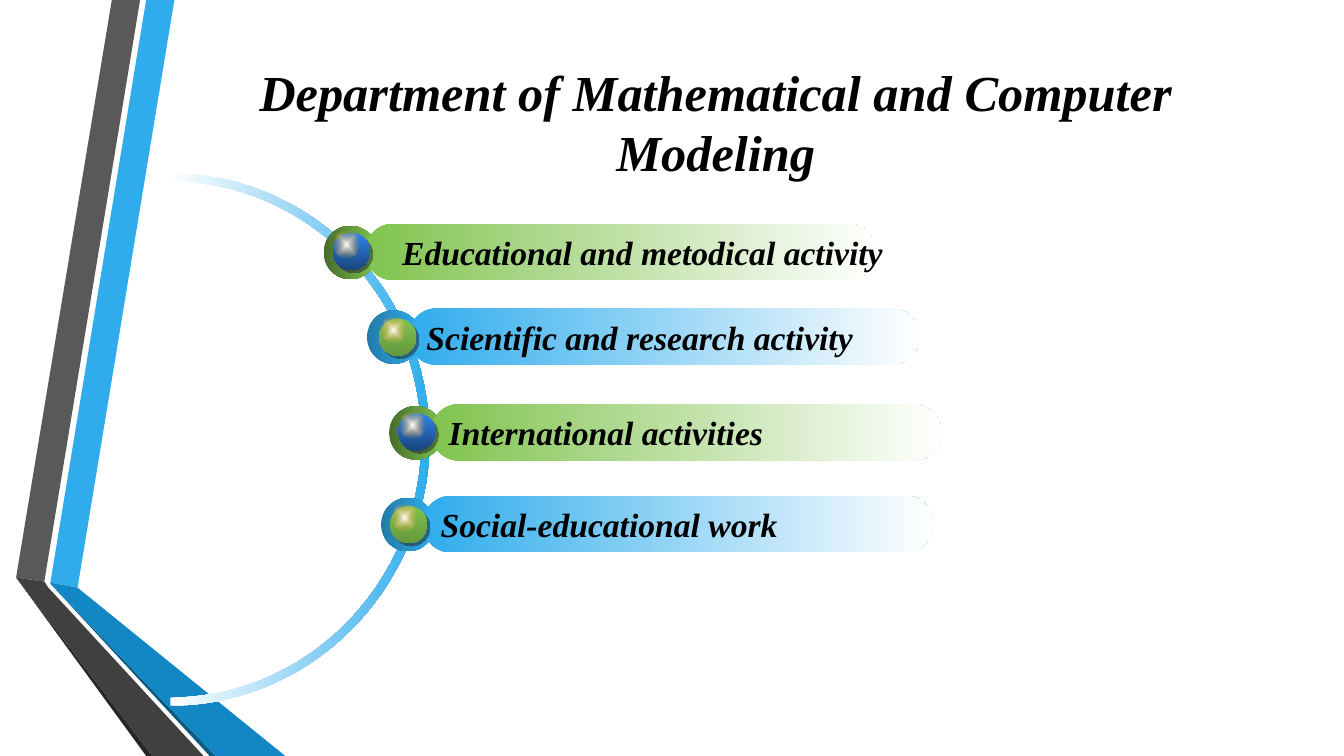
from dataclasses import dataclass

from lxml.etree import SubElement
from pptx import Presentation
from pptx.dml.color import RGBColor
from pptx.enum.shapes import MSO_SHAPE
from pptx.enum.text import MSO_ANCHOR, PP_ALIGN
from pptx.oxml import parse_xml
from pptx.oxml.ns import nsdecls, qn
from pptx.util import Inches, Pt


@dataclass(frozen=True)
class Theme:
    font: str = "Times New Roman"
    title_size: int = 36
    label_size: int = 24
    text: str = "000000"
    white: str = "FFFFFF"
    blue: str = "30ACEC"
    green: str = "80C34F"
    blue_ring: tuple = ("227BA9", "30ACEC")
    green_ring: tuple = ("476C2C", "80C34F")
    blue_ball: tuple = ("3085ED", "19457C")
    green_ball: tuple = ("80C34F", "64993E")
    glow: str = "E9940B"
    shadow: str = "212121"
    gray: str = "595959"
    dark_gray: str = "404040"
    black_gray: str = "262626"
    deep_blue: str = "1287C3"
    navy: str = "0C5A82"


THEME = Theme()

RIBBONS = [
    (THEME.blue, [(0.5, 5.78), (0.77, 5.83), (1.73, 0), (1.45, 0)]),
    (THEME.gray, [(1.39, 0), (1.11, 0), (0.16, 5.73), (0.44, 5.77)]),
    (THEME.black_gray, [(0.16, 5.73), (1.45, 7.5), (1.51, 7.5)]),
    (THEME.navy, [(0.5, 5.79), (2.08, 7.5), (2.14, 7.5)]),
    (THEME.deep_blue, [(0.5, 5.79), (2.14, 7.5), (2.83, 7.5), (0.77, 5.83), (0.5, 5.78)]),
    (THEME.dark_gray, [(2.02, 7.5), (0.48, 5.83), (0.44, 5.77), (0.16, 5.73), (1.51, 7.5)]),
]

ARC_CORNERS = [(1.69, 1.8), (4.18, 4.36), (1.69, 6.92), (1.69, 7), (4.26, 4.36), (1.69, 1.72)]

GREEN_ITEM = (THEME.green_ring, THEME.green, THEME.blue_ball)
BLUE_ITEM = (THEME.blue_ring, THEME.blue, THEME.green_ball)

ITEMS = [
    (3.86, 4.03, 0.09, 0.07, GREEN_ITEM, "International activities"),
    (3.78, 4.94, 0.09, 0.08, BLUE_ITEM, "Social-educational work"),
    (3.64, 3.08, 0.12, 0.08, BLUE_ITEM, "Scientific and research activity"),
    (3.21, 2.24, 0.09, 0.07, GREEN_ITEM, ""),
]


def clear_style(shape):
    shape.line.fill.background()
    shape.shadow.inherit = False


def fill_gradient(shape, colors, angle=0):
    shape.fill.gradient()
    shape.fill.gradient_angle = angle
    for stop, color in zip(shape.fill.gradient_stops, colors):
        stop.color.rgb = RGBColor.from_string(color)


def add_polygon(shapes, points):
    corners = [(Inches(x), Inches(y)) for x, y in points]
    builder = shapes.build_freeform(*corners[0])
    builder.add_line_segments(corners[1:], close=True)
    shape = builder.convert_to_shape()
    clear_style(shape)
    return shape


def add_ribbon(shapes, color, points):
    shape = add_polygon(shapes, points)
    shape.fill.solid()
    shape.fill.fore_color.rgb = RGBColor.from_string(color)


def quarter_controls(start, end, bend=0.55):
    (x0, y0), (x1, y1) = start, end
    if x0 < x1:
        return (x0 + bend * (x1 - x0), y0), (x1, y1 + bend * (y0 - y1))
    return (x0, y0 + bend * (y1 - y0)), (x1 + bend * (x0 - x1), y1)


def round_quarters(shape):
    points = list(shape._element.spPr.iter(qn("a:pt")))
    places = [(int(point.get("x")), int(point.get("y"))) for point in points]
    for point, start, end in zip(points[1:], places, places[1:]):
        if start[0] == end[0]:
            continue
        curve = "".join(
            f'<a:pt x="{round(x)}" y="{round(y)}"/>'
            for x, y in (*quarter_controls(start, end), end)
        )
        segment = point.getparent()
        segment.getparent().replace(segment, parse_xml(
            f'<a:cubicBezTo {nsdecls("a")}>{curve}</a:cubicBezTo>'
        ))


def add_arc(shapes):
    arc = add_polygon(shapes, ARC_CORNERS)
    round_quarters(arc)
    fill_gradient(arc, (THEME.white, THEME.blue))


def add_preset(shapes, kind, left, top, width, height, colors, angle=0):
    shape = shapes.add_shape(
        kind, Inches(left), Inches(top), Inches(width), Inches(height)
    )
    clear_style(shape)
    fill_gradient(shape, colors, angle)
    return shape


def write_text(shape, text, size, align=PP_ALIGN.LEFT, wrap=True, anchor=MSO_ANCHOR.MIDDLE):
    frame = shape.text_frame
    frame.text = text
    frame.word_wrap = wrap
    frame.vertical_anchor = anchor
    paragraph = frame.paragraphs[0]
    paragraph.alignment = align
    font = paragraph.runs[0].font
    font.name = THEME.font
    font.size = Pt(size)
    font.bold = font.italic = True
    font.color.rgb = RGBColor.from_string(THEME.text)


def add_text(shapes, left, top, width, height, text, size, **options):
    box = shapes.add_textbox(Inches(left), Inches(top), Inches(width), Inches(height))
    write_text(box, text, size, **options)


def add_drop_shadow(shape):
    effects = shape._element.spPr.find(qn("a:effectLst"))
    effects.append(parse_xml(
        f'<a:outerShdw {nsdecls("a")} blurRad="0" dist="{Pt(2.8)}" dir="2700000" '
        f'algn="ctr" rotWithShape="0"><a:srgbClr val="{THEME.shadow}">'
        '<a:alpha val="50000"/></a:srgbClr></a:outerShdw>'
    ))


def make_radial_glow(shape):
    gradient = shape._element.spPr.find(qn("a:gradFill"))
    outer_color = gradient.findall(".//" + qn("a:srgbClr"))[-1]
    SubElement(outer_color, qn("a:alpha")).set("val", "0")
    gradient.replace(gradient.find(qn("a:lin")), parse_xml(
        f'<a:path {nsdecls("a")} path="shape"><a:fillToRect l="50000" t="50000" '
        'r="50000" b="50000"/></a:path>'
    ))


def add_item(shapes, left, top, ball_dx, ball_dy, colors, label):
    ring, bar_color, ball_colors = colors
    oval = MSO_SHAPE.OVAL
    add_preset(shapes, oval, left, top, 0.53, 0.53, ring)
    bar = add_preset(
        shapes, MSO_SHAPE.ROUNDED_RECTANGLE, left + 0.41, top - 0.02, 5.07, 0.56,
        (bar_color, THEME.white),
    )
    bar.adjustments[0] = 0.5
    if label:
        write_text(bar, label, THEME.label_size, wrap=False)
    ball_left, ball_top = left + ball_dx, top + ball_dy
    ball = add_preset(shapes, oval, ball_left, ball_top, 0.37, 0.37, ball_colors, 270)
    add_drop_shadow(ball)
    glow = add_preset(
        shapes, oval, ball_left + 0.01, ball_top - 0.02, 0.26, 0.27,
        (THEME.white, THEME.glow),
    )
    make_radial_glow(glow)


def main():
    presentation = Presentation()
    presentation.slide_width = Inches(13.33)
    presentation.slide_height = Inches(7.5)
    slide = presentation.slides.add_slide(presentation.slide_layouts[6])
    shapes = slide.shapes
    ribbon_group = shapes.add_group_shape()
    for color, points in RIBBONS:
        add_ribbon(ribbon_group.shapes, color, points)
    add_text(
        shapes, 1.62, 0.75, 10.96, 0.91, "Department of Mathematical and Computer Modeling",
        THEME.title_size, align=PP_ALIGN.CENTER,
    )
    add_arc(shapes)
    for item in ITEMS:
        add_item(shapes.add_group_shape().shapes, *item)
    add_text(
        shapes, 3.89, 2.25, 6.18, 0.5, "Educational and metodical activity",
        THEME.label_size, anchor=MSO_ANCHOR.TOP,
    )
    presentation.save("out.pptx")


if __name__ == "__main__":
    main()
